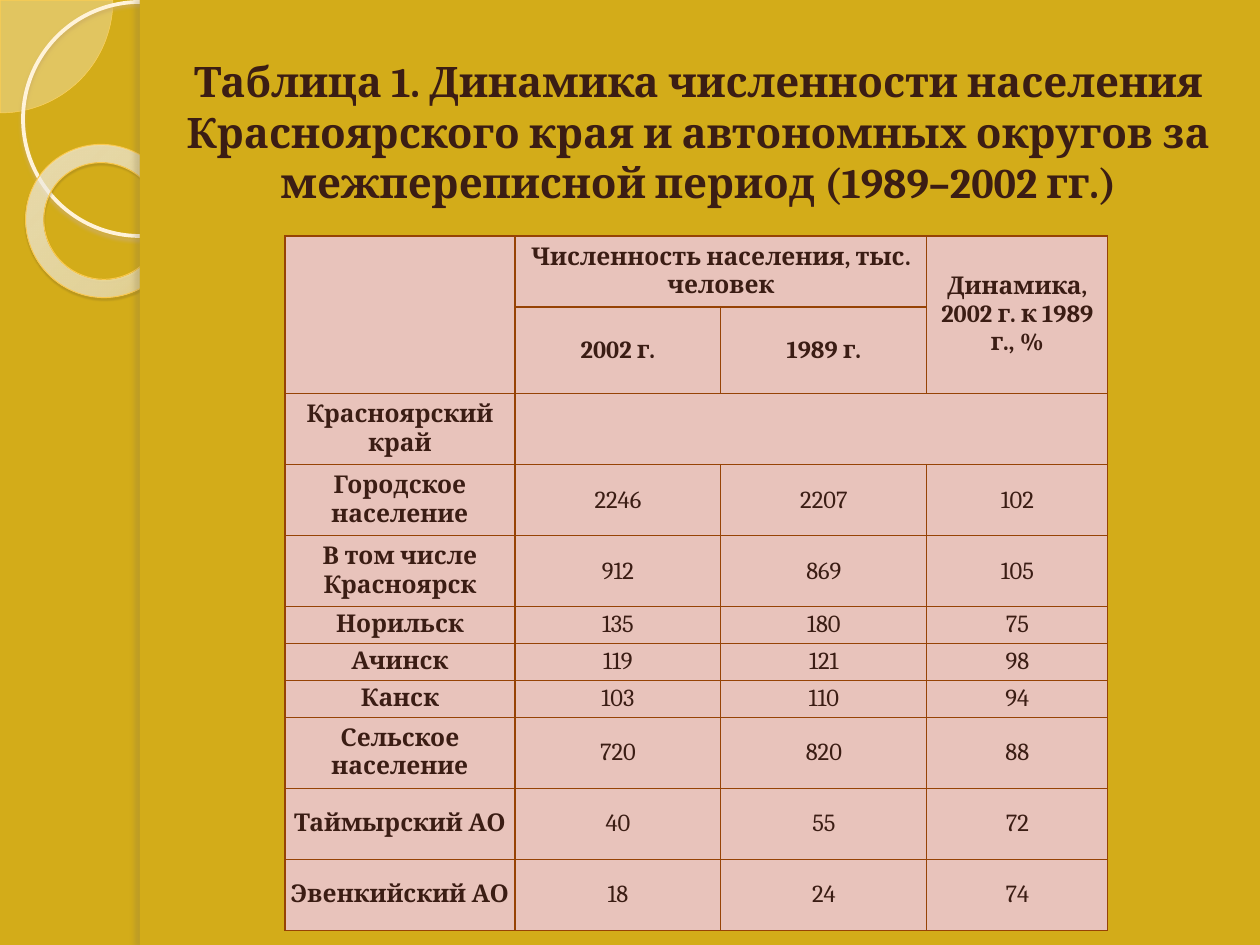
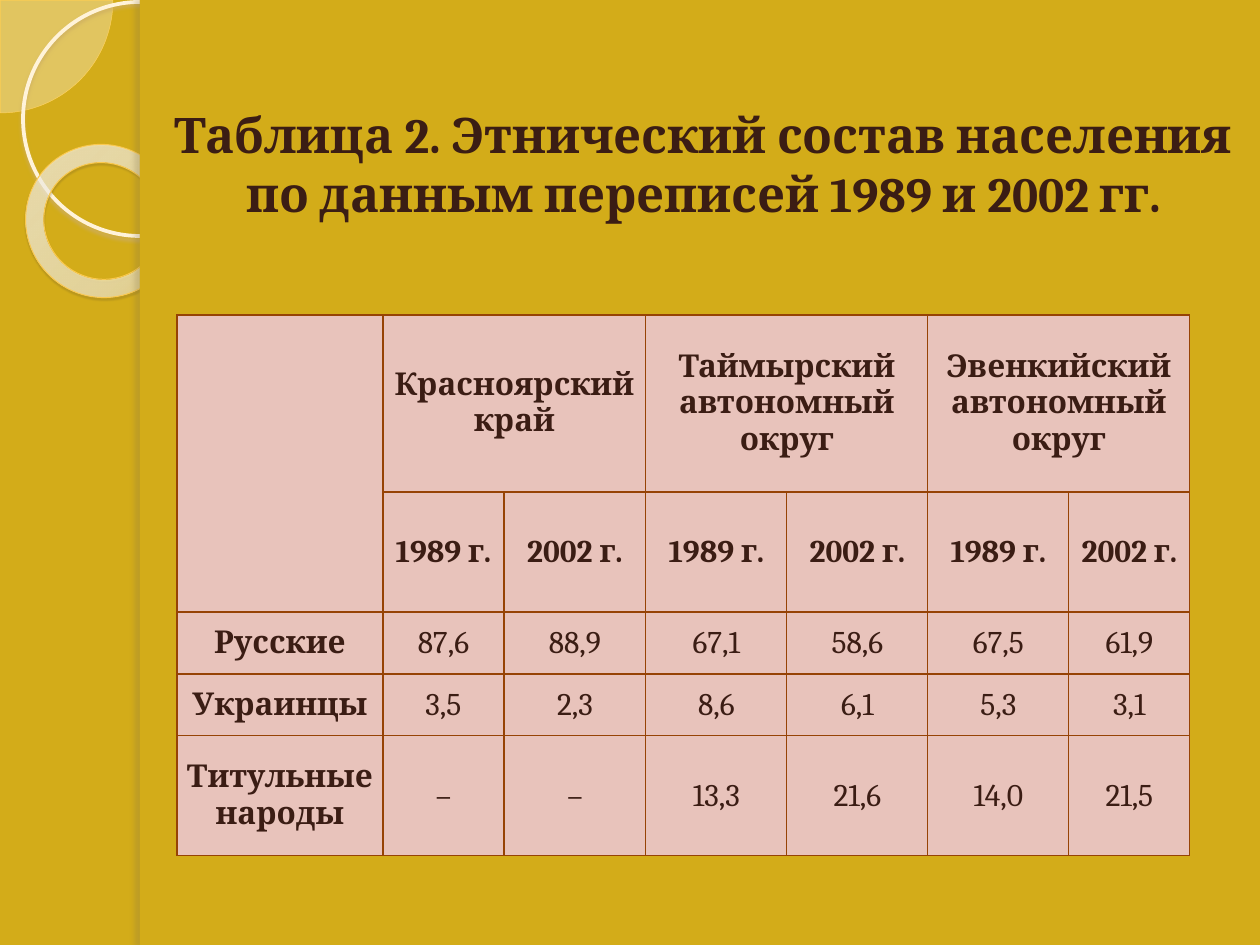
"""Build two slides of census tables for Krasnoyarsk Krai."""
from lxml import etree
from pptx import Presentation
from pptx.dml.color import RGBColor
from pptx.enum.shapes import MSO_SHAPE
from pptx.enum.text import MSO_ANCHOR, MSO_AUTO_SIZE, PP_ALIGN
from pptx.oxml import parse_xml
from pptx.oxml.ns import nsdecls, qn
from pptx.util import Emu, Pt

PIE, RING, DONUT, RECTANGLE = (
    MSO_SHAPE.PIE, MSO_SHAPE.OVAL, MSO_SHAPE.DONUT, MSO_SHAPE.RECTANGLE)
CENTER, MIDDLE, NO_FIT = PP_ALIGN.CENTER, MSO_ANCHOR.MIDDLE, MSO_AUTO_SIZE.NONE

GOLD = RGBColor(0xD3, 0xAC, 0x19)
BROWN = RGBColor(0x3B, 0x1D, 0x14)
RUST = RGBColor(0x96, 0x43, 0x05)
PINK = RGBColor(0xE8, 0xC3, 0xBB)
CREAM = RGBColor(0xFF, 0xFA, 0xF1)
PIE_EDGE = RGBColor(0xFF, 0xD2, 0x60)
RING_EDGE = RGBColor(0xFF, 0xF3, 0xD9)
DONUT_EDGE = RGBColor(0xFB, 0xC9, 0x4E)
RING_SHADOW = RGBColor(0xCE, 0xAF, 0x61)
DONUT_SHADOW = RGBColor(0x6F, 0x5B, 0x27)
BAND_SHADOW = RGBColor(0x81, 0x71, 0x4B)
DONUT_STOPS = [
    (0, RGBColor(0xFF, 0xFC, 0xF5), 70),
    (70, RGBColor(0xFF, 0xFD, 0xFA), 55),
    (100, RGBColor(0xFF, 0xD5, 0x6B), 60),
]
FONT = "Cambria"
PX = 914400 / 126
WIDTH, HEIGHT, BAND_LEFT = 1260, 945, 140
TITLE_ONLY = 5


def px(length):
    return Emu(round(length * PX))


def color_xml(color, alpha):
    return (f'<a:srgbClr {nsdecls("a")} val="{color}">'
            f'<a:alpha val="{alpha * 1000}"/></a:srgbClr>')


def write_text(frame, text, size, bold=True):
    paragraph = frame.paragraphs[0]
    paragraph.alignment = CENTER
    run = paragraph.add_run()
    run.text = text
    run.font.name = FONT
    run.font.size = Pt(size)
    run.font.bold = bold
    run.font.color.rgb = BROWN


class Deck:
    """Hold the presentation, its style and the current slide."""

    def __init__(self):
        self.presentation = Presentation()
        self.presentation.slide_width = px(WIDTH)
        self.presentation.slide_height = px(HEIGHT)
        self.slide = None

    def add_slide(self):
        layout = self.presentation.slide_layouts[TITLE_ONLY]
        self.slide = self.presentation.slides.add_slide(layout)
        background = self.slide.background.fill
        background.solid()
        background.fore_color.rgb = GOLD
        self.decorate()

    def decorate(self):
        pie = self.shape(PIE, (-112, -112, 225, 225), fill=CREAM, alpha=33,
                         line=PIE_EDGE, line_width=0.25)
        pie.adjustments[0] = 0
        pie.adjustments[1] = 54.02
        self.shape(RING, (23, 2, 234, 234), line=RING_EDGE, line_width=2.15,
                   shadow=(RING_SHADOW, 85, 2, 2, 90))
        donut = self.shape(DONUT, (25, 145, 155, 152), stops=DONUT_STOPS,
                           line=DONUT_EDGE, line_width=0.58,
                           shadow=(DONUT_SHADOW, 35, 1, 1.2, 75))
        donut.rotation = 38.6
        donut.adjustments[0] = 0.12
        self.shape(RECTANGLE, (BAND_LEFT, 0, WIDTH - BAND_LEFT, HEIGHT), fill=GOLD)
        self.shape(RECTANGLE, (BAND_LEFT, 0, 10, HEIGHT), fill=GOLD,
                   shadow=(BAND_SHADOW, 25, 3, 3, 180))

    def shape(self, kind, box, fill=None, alpha=100, stops=None, line=None,
              line_width=1, shadow=None):
        shape = self.slide.shapes.add_shape(kind, *map(px, box))
        properties = shape.element.spPr
        if fill is None:
            shape.fill.background()
        else:
            shape.fill.solid()
            shape.fill.fore_color.rgb = fill
            solid = properties.find(qn("a:solidFill"))
            solid.replace(solid[0], parse_xml(color_xml(fill, alpha)))
        if stops:
            properties.replace(properties.find(qn("a:noFill")),
                               self.gradient(stops))
        if line is None:
            shape.line.fill.background()
        else:
            shape.line.color.rgb = line
            shape.line.width = Pt(line_width)
        shape.shadow.inherit = False
        if shadow:
            color, opacity, blur, distance, angle = shadow
            outer = etree.SubElement(
                properties.find(qn("a:effectLst")), qn("a:outerShdw"),
                blurRad=str(Pt(blur)), dist=str(Pt(distance)),
                dir=str(angle * 60000), algn="tl", rotWithShape="0")
            outer.append(parse_xml(color_xml(color, opacity)))
        return shape

    def gradient(self, stops):
        stop_xml = "".join(
            f'<a:gs pos="{position * 1000}">{color_xml(color, alpha)}</a:gs>'
            for position, color, alpha in stops)
        return parse_xml(
            f'<a:gradFill {nsdecls("a")} rotWithShape="1">'
            f'<a:gsLst>{stop_xml}</a:gsLst><a:path path="circle">'
            '<a:fillToRect l="-408000" t="-50000" r="508000" b="150000"/>'
            '</a:path></a:gradFill>')

    def title(self, text, box, size):
        title = self.slide.shapes.title
        title.left, title.top, title.width, title.height = map(px, box)
        title.element.getparent().append(title.element)
        frame = title.text_frame
        frame.word_wrap = True
        frame.auto_size = NO_FIT
        frame.vertical_anchor = MIDDLE
        write_text(frame, text, size)

    def table(self, rows, left, top, widths, heights, spans, size, header_rows=2):
        frame = self.slide.shapes.add_table(
            len(heights), len(widths), px(left), px(top),
            px(sum(widths)), px(sum(heights)))
        table = frame.table
        table.first_row = table.horz_banding = False
        for column, width in zip(table.columns, widths):
            column.width = px(width)
        for row, height in zip(table.rows, heights):
            row.height = px(height)
        for row_index, texts in enumerate(rows):
            for column_index, text in enumerate(texts):
                cell = table.cell(row_index, column_index)
                self.format_cell(cell)
                if text:
                    bold = row_index < header_rows or column_index == 0
                    write_text(cell.text_frame, text, size, bold)
        for first, last in spans:
            table.cell(*first).merge(table.cell(*last))

    def format_cell(self, cell):
        cell.margin_left = cell.margin_right = px(1)
        cell.margin_top = cell.margin_bottom = px(1)
        cell.vertical_anchor = MIDDLE
        properties = cell._tc.get_or_add_tcPr()
        for side in ("lnL", "lnR", "lnT", "lnB"):
            border = etree.SubElement(properties, qn(f"a:{side}"), w=str(Pt(0.75)))
            solid = etree.SubElement(border, qn("a:solidFill"))
            solid.append(parse_xml(color_xml(RUST, 100)))
        cell.fill.solid()
        cell.fill.fore_color.rgb = PINK


POPULATION = [
    ("", "Численность населения, тыс. человек", "", "Динамика, 2002 г. к 1989 г., %"),
    ("", "2002 г.", "1989 г.", ""),
    ("Красноярский край", "", "", ""),
    ("Городское население", "2246", "2207", "102"),
    ("В том числе Красноярск", "912", "869", "105"),
    ("Норильск", "135", "180", "75"),
    ("Ачинск", "119", "121", "98"),
    ("Канск", "103", "110", "94"),
    ("Сельское население", "720", "820", "88"),
    ("Таймырский АО", "40", "55", "72"),
    ("Эвенкийский АО", "18", "24", "74"),
]
ETHNIC_GROUPS = [
    ("", "Красноярский край", "", "Таймырский автономный округ", "",
     "Эвенкийский автономный округ", ""),
    ("",) + ("1989 г.", "2002 г.") * 3,
    ("Русские", "87,6", "88,9", "67,1", "58,6", "67,5", "61,9"),
    ("Украинцы", "3,5", "2,3", "8,6", "6,1", "5,3", "3,1"),
    ("Титульные народы", "–", "–", "13,3", "21,6", "14,0", "21,5"),
]


def main():
    deck = Deck()
    deck.add_slide()
    deck.table(POPULATION, 285, 236, [230, 206, 206, 181],
               [71, 86, 71, 71, 71, 37, 37, 37, 71, 71, 71],
               [((0, 0), (1, 0)), ((0, 1), (0, 2)), ((0, 3), (1, 3)),
                ((2, 1), (2, 3))], size=14)
    deck.title("Таблица 1. Динамика численности населения Красноярского края "
               "и автономных округов за межпереписной период (1989–2002 гг.)",
               (137, 49, 1123, 165), size=24)
    deck.add_slide()
    deck.table(ETHNIC_GROUPS, 177, 315, [206, 121, 142, 141, 141, 141, 121],
               [177, 120, 62, 62, 120],
               [((0, 0), (1, 0))] + [((0, column), (0, column + 1))
                                     for column in (1, 3, 5)], size=18)
    deck.title("Таблица 2. Этнический состав населения по данным переписей "
               "1989 и 2002 гг.", (147, 98, 1113, 131), size=28)
    deck.presentation.save("out.pptx")


if __name__ == "__main__":
    main()
